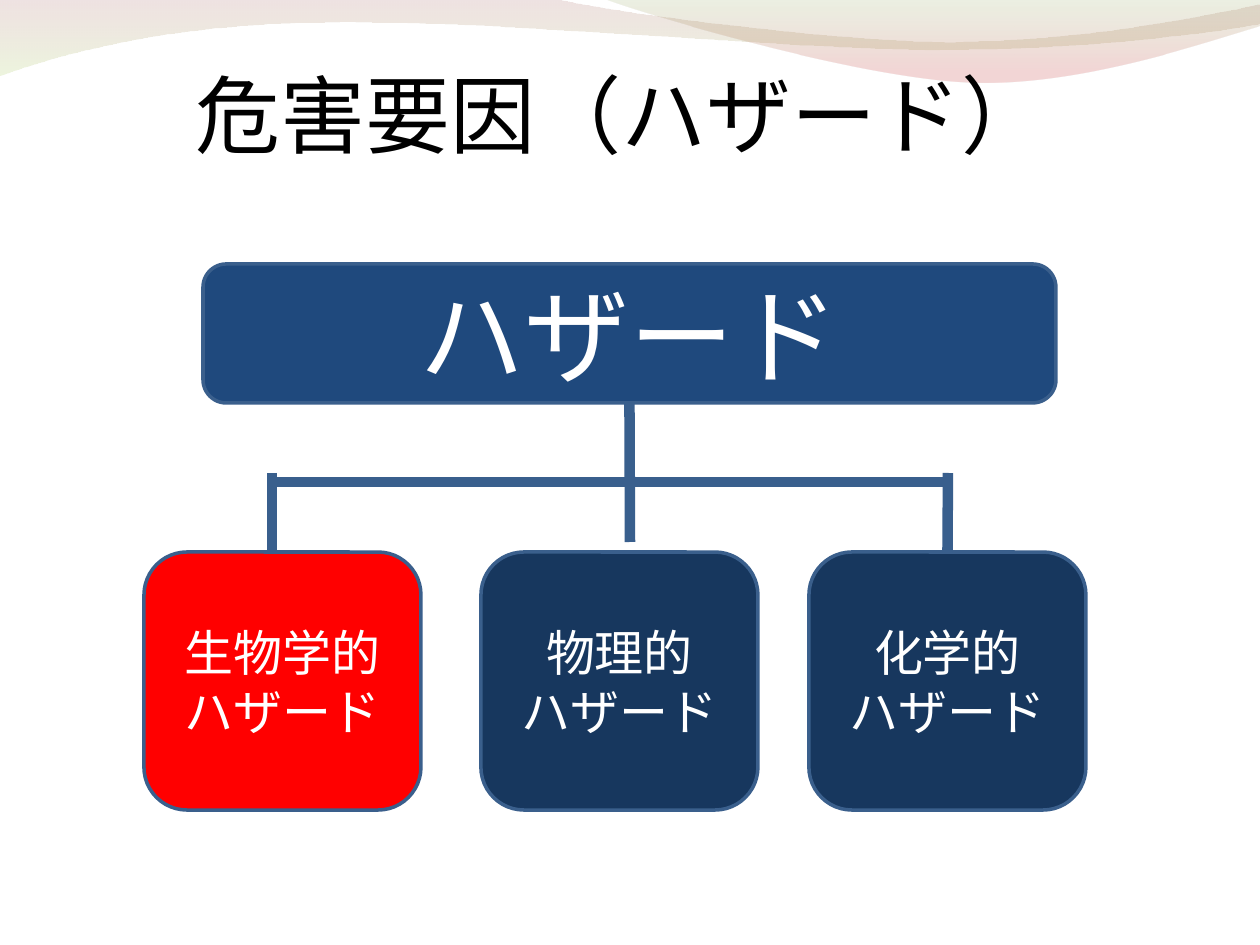
from dataclasses import dataclass

from lxml import etree
from pptx import Presentation
from pptx import util as u
from pptx.dml.color import RGBColor
from pptx.enum import shapes, text
from pptx.oxml.ns import qn

PX_PER_INCH = 126


@dataclass(frozen=True)
class Theme:
    font: str = "Arial"
    black: str = "000000"
    white: str = "FFFFFF"
    root: str = "1F497D"
    branch: str = "17375E"
    highlight: str = "FF0000"
    outline: str = "3A5F8C"
    link: str = "395F8D"
    title_pt: float = 48.6
    root_pt: float = 60
    branch_pt: float = 28
    outline_pt: float = 2
    link_pt: float = 6


@dataclass(frozen=True)
class Box:
    lines: tuple[str, ...]
    left: int
    top: int
    width: int
    height: int
    fill: str
    size: float


@dataclass(frozen=True)
class Stop:
    position: float
    color: str
    opacity: int


@dataclass(frozen=True)
class Wave:
    """Segments hold one point for a line, three for a cubic curve."""
    start: tuple[int, int]
    segments: tuple[tuple[tuple[int, int], ...], ...]
    stops: tuple[Stop, Stop]


THEME = Theme()

WAVES = (
    Wave((1, -1), (
        ((556, -1),),
        ((600, 11), (837, 42), (956, 42)),
        ((1075, 42), (1207, 16), (1260, 5)),
        ((1261, 24),),
        ((1237, 29), (1096, 50), (940, 50)),
        ((784, 50), (481, 19), (325, 23)),
        ((164, 24), (59, 55), (0, 76)),
    ), (Stop(0, "8B2F2D", 14), Stop(1, "95C238", 17))),
    Wave((604, -1), (
        ((641, 14), (859, 78), (969, 82)),
        ((1079, 87), (1211, 40), (1260, 26)),
        ((1260, 0),),
    ), (Stop(0, "769537", 14), Stop(0.8, "BE3330", 20))),
)

HAZARD = Box(("ハザード",), 203, 264, 853, 139, THEME.root, THEME.root_pt)
KINDS = tuple(
    Box((kind, "ハザード"), left, 552, 277, 258, fill, THEME.branch_pt)
    for kind, left, fill in (
        ("生物学的", 144, THEME.highlight),
        ("物理的", 481, THEME.branch),
        ("化学的", 809, THEME.branch),
    )
)


def px(value: int) -> int:
    return u.Emu(round(value * u.Inches(1) / PX_PER_INCH))


def apply(target, formats: dict) -> None:
    for name, value in formats.items():
        setattr(target, name, value)


def write(frame, lines: tuple[str, ...], size: float, color: str) -> None:
    apply(frame, {"word_wrap": True, "vertical_anchor": text.MSO_ANCHOR.MIDDLE})
    for index, line in enumerate(lines):
        paragraph = frame.paragraphs[0] if index == 0 else frame.add_paragraph()
        paragraph.alignment = text.PP_ALIGN.CENTER
        run = paragraph.add_run()
        run.text = line
        apply(run.font, {"name": THEME.font, "size": u.Pt(size)})
        run.font.color.rgb = RGBColor.from_string(color)


def bend(shape, segments) -> None:
    """Merge the three line steps of each cubic segment into one curve."""
    steps = iter(list(shape.element.iter(qn("a:lnTo"))))
    for segment in segments:
        group = [next(steps) for _ in segment]
        if len(group) == 3:
            curve = etree.Element(qn("a:cubicBezTo"))
            group[0].addprevious(curve)
            for step in group:
                curve.append(step[0])
                step.getparent().remove(step)


def draw_wave(slide, wave: Wave):
    points = [(px(x), px(y)) for segment in wave.segments for x, y in segment]
    builder = slide.shapes.build_freeform(px(wave.start[0]), px(wave.start[1]))
    builder.add_line_segments(points, close=True)
    shape = builder.convert_to_shape()
    bend(shape, wave.segments)
    shape.shadow.inherit = False
    shape.line.fill.background()
    shape.fill.gradient()
    shape.fill.gradient_angle = 270
    for target, stop in zip(shape.fill.gradient_stops, wave.stops):
        target.position = stop.position
        target.color.rgb = RGBColor.from_string(stop.color)
    # Opacity of each gradient stop
    colors = shape.element.spPr.iter(qn("a:srgbClr"))
    for color, stop in zip(colors, wave.stops):
        etree.SubElement(color, qn("a:alpha"), val=str(stop.opacity * 1000))
    return shape


def draw_box(slide, box: Box):
    shape = slide.shapes.add_shape(
        shapes.MSO_SHAPE.ROUNDED_RECTANGLE,
        px(box.left), px(box.top), px(box.width), px(box.height))
    shape.shadow.inherit = False
    shape.fill.solid()
    shape.fill.fore_color.rgb = RGBColor.from_string(box.fill)
    shape.line.color.rgb = RGBColor.from_string(THEME.outline)
    shape.line.width = u.Pt(THEME.outline_pt)
    write(shape.text_frame, box.lines, box.size, THEME.white)
    return shape


def draw_link(slide, x1: int, y1: int, x2: int, y2: int):
    link = slide.shapes.add_connector(
        shapes.MSO_CONNECTOR.STRAIGHT, px(x1), px(y1), px(x2), px(y2))
    link.line.color.rgb = RGBColor.from_string(THEME.link)
    link.line.width = u.Pt(THEME.link_pt)
    etree.SubElement(link.element.spPr, qn("a:effectLst"))
    return link


def main() -> None:
    deck = Presentation()
    apply(deck, {"slide_width": px(1260), "slide_height": px(945)})
    slide = deck.slides.add_slide(deck.slide_layouts[5])

    # Wave decoration along the top edge, kept on the slide master
    for wave in WAVES:
        deck.slide_master.shapes.element.append(draw_wave(slide, wave).element)

    # Title
    title = slide.shapes.title
    apply(title, {"left": px(54), "top": px(66), "width": px(1134), "height": px(88)})
    apply(title.text_frame, {
        "margin_left": 0, "margin_top": u.Inches(0.05), "margin_right": 0,
        "margin_bottom": 0, "auto_size": text.MSO_AUTO_SIZE.NONE})
    write(title.text_frame, ("危害要因（ハザード）",), THEME.title_pt, THEME.black)

    # Hazard and its three kinds
    hazard = draw_box(slide, HAZARD)
    biological, physical, chemical = [draw_box(slide, kind) for kind in KINDS]

    # Tree: crossbar, stem and outer drops
    left, right, bar, drop_top, kinds_top = 272, 948, 482, 473, KINDS[0].top
    draw_link(slide, left, bar, right, bar)
    stem = draw_link(slide, 630, 403, 630, 542)
    stem.begin_connect(hazard, 2)
    draw_link(slide, left, drop_top, left, kinds_top)
    chemical_drop = draw_link(slide, right, drop_top, right, kinds_top)
    chemical_drop.end_connect(chemical, 0)

    deck.save("out.pptx")


if __name__ == "__main__":
    main()
